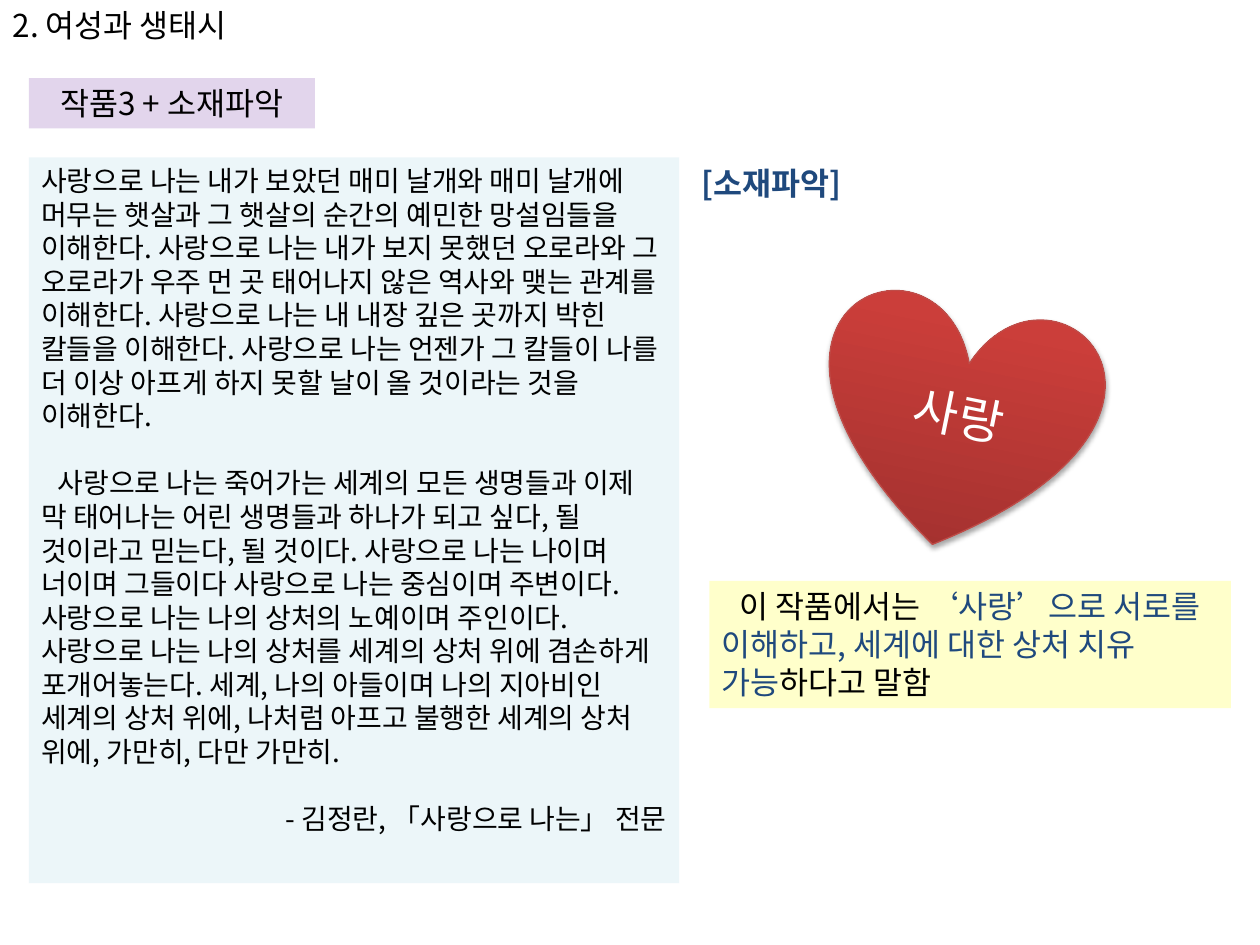
from lxml.etree import SubElement
from pptx import Presentation
from pptx.dml.color import RGBColor
from pptx.enum.shapes import MSO_SHAPE
from pptx.enum.text import MSO_ANCHOR, MSO_AUTO_SIZE, PP_ALIGN
from pptx.oxml.ns import qn
from pptx.util import Inches, Pt

FONT = "Noto Sans CJK KR"
COLORS = {
    "black": "000000", "white": "FFFFFF", "navy": "1F497D",
    "purple": "7030A0", "ice": "DBEEF4", "yellow": "FFFF99",
    "dark red": "9C2F2D", "red": "CB3E3A", "rim": "BF4C48",
}
POEM_LINE = 19.2  # height of one 16 point line, in points

VERSES = [
    "사랑으로 나는 내가 보았던 매미 날개와 매미 날개에 머무는 햇살과 그 햇살의 순간의 "
    "예민한 망설임들을 이해한다. 사랑으로 나는 내가 보지 못했던 오로라와 그 오로라가 우주 "
    "먼 곳 태어나지 않은 역사와 맺는 관계를 이해한다. 사랑으로 나는 내 내장 깊은 곳까지 "
    "박힌 칼들을 이해한다. 사랑으로 나는 언젠가 그 칼들이 나를 더 이상 아프게 하지 못할 "
    "날이 올 것이라는 것을 이해한다.",
    "사랑으로 나는 죽어가는 세계의 모든 생명들과 이제 막 태어나는 어린 생명들과 하나가 되고 "
    "싶다, 될 것이라고 믿는다, 될 것이다. 사랑으로 나는 나이며 너이며 그들이다 사랑으로 나는 "
    "중심이며 주변이다. 사랑으로 나는 나의 상처의 노예이며 주인이다. 사랑으로 나는 나의 상처를 "
    "세계의 상처 위에 겸손하게 포개어놓는다. 세계, 나의 아들이며 나의 지아비인 세계의 상처 "
    "위에, 나처럼 아프고 불행한 세계의 상처 위에, 가만히, 다만 가만히.",
]


def rgb(name):
    return RGBColor.from_string(COLORS[name])


class SlideBuilder:
    """Holds the slide and its style; places are in tenths of an inch."""

    def __init__(self, slide):
        self.slide = slide

    def place(self, *cells):
        return [Inches(cell / 10) for cell in cells]

    def set_text(self, paragraph, spans, size=18, color="black", bold=False,
                 align=PP_ALIGN.LEFT, indent=0, before=0):
        """Fill in (text, color) spans; a color of None keeps the paragraph's."""
        paragraph.alignment = align
        paragraph.space_before = Pt(before)
        font = paragraph.font
        font.size, font.bold, font.name = Pt(size), bold, FONT
        font.color.rgb = rgb(color)
        properties = paragraph._p.pPr
        properties.set("marL", "0")
        properties.set("indent", str(Inches(indent)))
        SubElement(properties.find(qn("a:defRPr")), qn("a:ea"), typeface=FONT)
        for text, span_color in spans:
            span = paragraph.add_run()
            span.text = text
            if span_color:
                span.font.color.rgb = rgb(span_color)

    def title(self, text, *cells):
        box = self.slide.shapes.title
        box.left, box.top, box.width, box.height = self.place(*cells)
        frame = box.text_frame
        frame.auto_size = MSO_AUTO_SIZE.NONE
        frame.word_wrap = False
        frame.vertical_anchor = MSO_ANCHOR.TOP
        self.set_text(frame.paragraphs[0], [(text, None)])

    def label(self, text, *cells, **style):
        box = self.slide.shapes.add_textbox(*self.place(*cells))
        box.text_frame.word_wrap = True
        self.set_text(box.text_frame.paragraphs[0], [(text, None)], **style)

    def panel(self, fill, alpha, *cells):
        """Add a see-through rectangle and return its text frame."""
        box = self.slide.shapes.add_shape(MSO_SHAPE.RECTANGLE, *self.place(*cells))
        box.shadow.inherit = False
        box.line.fill.background()
        box.fill.solid()
        box.fill.fore_color.rgb = rgb(fill)
        tint = next(box._element.spPr.iter(qn("a:srgbClr")))
        SubElement(tint, qn("a:alpha"), val=str(alpha * 1000))
        box.text_frame.word_wrap = True
        box.text_frame.vertical_anchor = MSO_ANCHOR.TOP
        return box.text_frame

    def heart(self, text, rotation, *cells):
        heart = self.slide.shapes.add_shape(MSO_SHAPE.HEART, *self.place(*cells))
        heart.rotation = rotation
        heart.fill.gradient()
        heart.fill.gradient_angle = 90
        stops = zip(heart.fill.gradient_stops, ("dark red", "red"), (0, 0.8))
        for stop, color, position in stops:
            stop.color.rgb = rgb(color)
            stop.position = position
        heart.line.color.rgb = rgb("rim")
        heart.line.width = Pt(0.75)
        # Soft shadow straight below
        heart.shadow.inherit = False
        effects = heart._element.spPr.find(qn("a:effectLst"))
        shadow = SubElement(effects, qn("a:outerShdw"), blurRad=str(Pt(3.1)),
                            dist=str(Pt(1.8)), dir="5400000", rotWithShape="0")
        shade = SubElement(shadow, qn("a:srgbClr"), val=COLORS["black"])
        SubElement(shade, qn("a:alpha"), val="35000")
        heart.text_frame.vertical_anchor = MSO_ANCHOR.MIDDLE
        self.set_text(heart.text_frame.paragraphs[0], [(text, None)], size=28,
                      color="white", align=PP_ALIGN.CENTER)


def main():
    deck = Presentation()
    deck.slide_width, deck.slide_height = Inches(10), Inches(7.5)
    page = SlideBuilder(deck.slides.add_slide(deck.slide_layouts[5]))

    # Heading and section tag
    page.title("2. 여성과 생태시", 0, 0, 21.6, 4)
    tag = page.panel("purple", 20, 2.3, 6.2, 22.7, 4)
    page.set_text(tag.paragraphs[0], [("작품3 + 소재파악", None)],
                  align=PP_ALIGN.CENTER)

    # Poem with its credit
    poem = page.panel("ice", 50, 2.3, 12.5, 51.6, 57.6)
    page.set_text(poem.paragraphs[0], [(VERSES[0], None)], size=16)
    page.set_text(poem.add_paragraph(), [(VERSES[1], None)], size=16,
                  indent=0.13, before=POEM_LINE)
    page.set_text(poem.add_paragraph(), [("- 김정란, 「사랑으로 나는」 전문", None)],
                  size=16, align=PP_ALIGN.RIGHT, before=POEM_LINE)

    # Subject matter
    page.label("[소재파악]", 54.7, 12.5, 42.2, 4, color="navy", bold=True)
    summary = page.panel("yellow", 50, 56.3, 46.1, 41.4, 10.1)
    page.set_text(summary.paragraphs[0], [
        ("이 작품에서는 ", None),
        ("‘사랑’으로 서로를 이해하고, 세계에 대한 상처 치유 가능", "navy"),
        ("하다고 말함", None),
    ], indent=0.14)
    page.heart("사랑", 11.5, 65, 23.9, 21.9, 19.5)

    deck.save("out.pptx")


if __name__ == "__main__":
    main()
